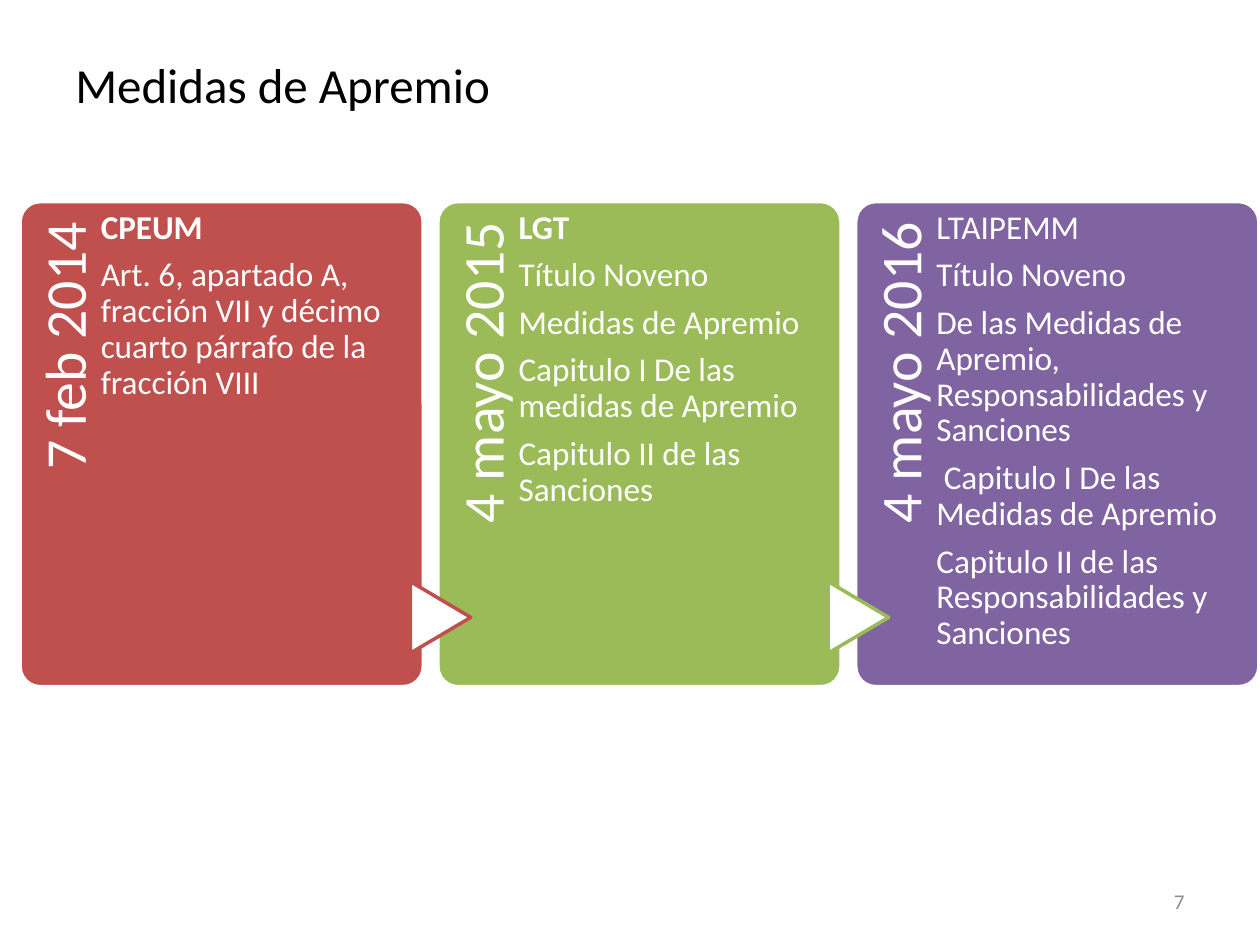
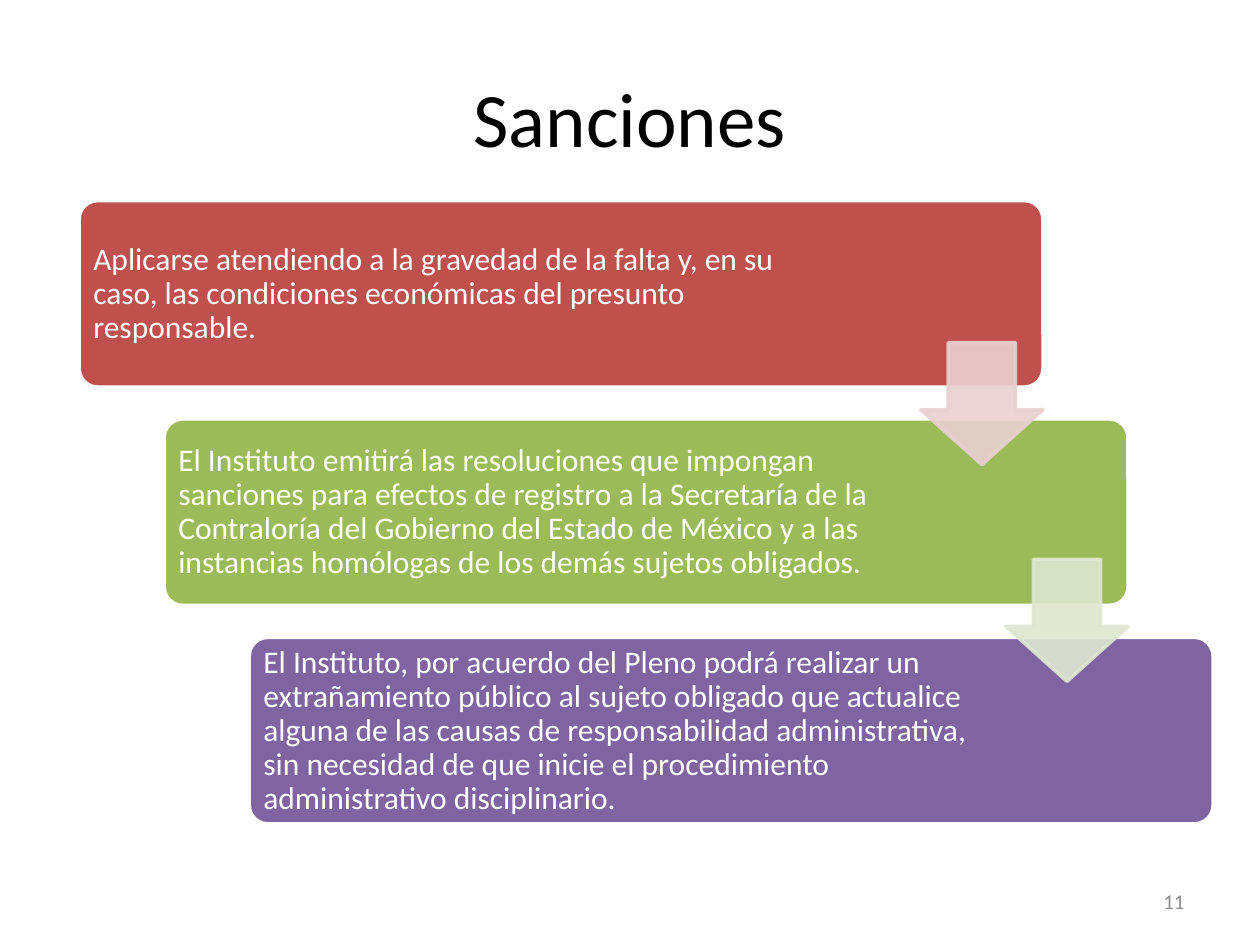
import pptx
import pptx.util
import pptx.dml.color
import pptx.enum.shapes
import pptx.enum.text
import pptx.oxml
import pptx.oxml.ns

Pt = pptx.util.Pt
SHAPE = pptx.enum.shapes.MSO_SHAPE
ALIGN = pptx.enum.text.PP_ALIGN
ANCHOR = pptx.enum.text.MSO_ANCHOR

FONT = "Calibri"
COLORS = {
    "black": "000000", "white": "FFFFFF", "grey": "8C8C8C",
    "red": "C0504D", "green": "9BBB59", "purple": "8064A2",
    "pale_red": "E8D0D0", "pale_green": "DEE7D1",
}
THEMES = ["red", "green", "purple"]

# date, bold heading?, paragraphs
LAWS = [
    ("7 feb 2014", True, [
        "CPEUM",
        "Art. 6, apartado A, fracción VII y décimo cuarto párrafo de la fracción VIII",
    ]),
    ("4 mayo 2015", True, [
        "LGT",
        "Título Noveno",
        "Medidas de Apremio",
        "Capitulo I De las medidas de Apremio",
        "Capitulo II de las Sanciones",
    ]),
    ("4 mayo 2016", False, [
        "LTAIPEMM",
        "Título Noveno",
        "De las Medidas de Apremio, Responsabilidades y Sanciones",
        " Capitulo I De las Medidas de Apremio",
        "Capitulo II de las Responsabilidades y Sanciones",
    ]),
]

# text width, paragraph
SANCTIONS = [
    (435.6, "Aplicarse atendiendo a la gravedad de la falta y, en su caso, las condiciones "
            "económicas del presunto responsable."),
    (426.2, "El Instituto emitirá las resoluciones que impongan sanciones para efectos de "
            "registro a la Secretaría de la Contraloría del Gobierno del Estado de México y "
            "a las instancias homólogas de los demás sujetos obligados."),
    (426.2, "El Instituto, por acuerdo del Pleno podrá realizar un extrañamiento público al "
            "sujeto obligado que actualice alguna de las causas de responsabilidad "
            "administrativa, sin necesidad de que inicie el procedimiento administrativo "
            "disciplinario."),
]


def rgb(name):
    return pptx.dml.color.RGBColor.from_string(COLORS[name])


def add_text(s, box, paragraphs, size, color="white", align=ALIGN.LEFT, anchor=ANCHOR.TOP,
             insets=(7.2, 3.6, 7.2, 3.6), tight=False):
    """Add a text box; tight gives 90% lines with a gap of 35% of the font size."""
    sp = s.shapes.add_textbox(*map(Pt, box))
    tf = sp.text_frame
    tf.word_wrap = True
    tf.vertical_anchor = anchor
    tf.margin_left, tf.margin_top, tf.margin_right, tf.margin_bottom = map(Pt, insets)
    tf.text = "\n".join(paragraphs)
    for p in tf.paragraphs:
        p.alignment = align
        if tight:
            p.line_spacing = 0.9
            p.space_after = Pt(size * 0.35)
        for r in p.runs:
            r.font.name = FONT
            r.font.size = Pt(size)
            r.font.color.rgb = rgb(color)
    return sp


def add_shape(s, kind, box, fill, line, adjustments=(), opacity=None):
    sp = s.shapes.add_shape(kind, *map(Pt, box))
    sp.shadow.inherit = False
    for i, value in enumerate(adjustments):
        sp.adjustments[i] = value
    sp.fill.solid()
    sp.fill.fore_color.rgb = rgb(fill)
    sp.line.color.rgb = rgb(line)
    sp.line.width = Pt(2)
    if opacity:
        for clr in list(sp.element.spPr.iter(pptx.oxml.ns.qn("a:srgbClr"))):
            alpha = pptx.oxml.parse_xml(
                f'<a:alpha {pptx.oxml.ns.nsdecls("a")} val="{opacity * 1000}"/>')
            clr.append(alpha)
    return sp


def add_slide(prs, title, title_top, title_size, title_align, number):
    s = prs.slides.add_slide(prs.slide_layouts[6])
    add_text(s, (36, title_top, 648, 90), [title], title_size, "black", title_align,
             ANCHOR.MIDDLE)
    add_text(s, (516, 500.5, 168, 28.75), [number], 12, "grey", ALIGN.RIGHT, ANCHOR.MIDDLE)
    return s


def build_laws(prs):
    s = add_slide(prs, "Medidas de Apremio", 3, 28, ALIGN.LEFT, "7")
    left, top, width, height, pitch = 11.5, 115.2, 230.4, 277.2, 238.75
    for i, (date, bold_heading, paragraphs) in enumerate(LAWS):
        x = left + i * pitch
        add_shape(s, SHAPE.ROUNDED_RECTANGLE, (x, top, width, height), THEMES[i], "white",
                  [0.05])
        label = add_text(s, (x - 90, top + 90.7, 226.8, 46), [date], 33, align=ALIGN.RIGHT,
                         insets=(0, 8.6, 11.5, 0), tight=True)
        label.rotation = 270
        if i:
            pointer = add_shape(s, SHAPE.FLOWCHART_EXTRACT,
                                (x - 19, top + 220.3, 41, 34.6), "white", THEMES[i - 1])
            pointer.rotation = 90
        body = add_text(s, (x + 46.1, top, 172, height), paragraphs, 19,
                        insets=(0, 5, 0, 0), tight=True)
        body.text_frame.paragraphs[0].runs[0].font.bold = bold_heading


def build_sanctions(prs):
    s = add_slide(prs, "Sanciones", 21.6, 44, ALIGN.CENTER, "11")
    left, top, width, height = 45.2, 114.6, 550.8, 106.6
    step_x, step_y = 48.6, 124.8
    for i, (text_width, text) in enumerate(SANCTIONS):
        x, y = left + i * step_x, top + i * step_y
        add_shape(s, SHAPE.ROUNDED_RECTANGLE, (x, y, width, height), THEMES[i], "white", [0.1])
        add_text(s, (x + 3.1, y + 3.1, text_width, 100.8), [text], 18, anchor=ANCHOR.MIDDLE,
                 insets=(5, 5, 5, 5), tight=True)
    arrow = 69.8
    for i, color in enumerate(["pale_red", "pale_green"]):
        x = left + width - arrow + i * step_x
        y = top + 81.2 + i * 123.8
        add_shape(s, SHAPE.DOWN_ARROW, (x, y, arrow, arrow), color, color, [0.55, 0.45], 90)


def main():
    prs = pptx.Presentation()
    prs.slide_width, prs.slide_height = Pt(720), Pt(540)
    build_laws(prs)
    build_sanctions(prs)
    prs.save("out.pptx")


if __name__ == "__main__":
    main()
